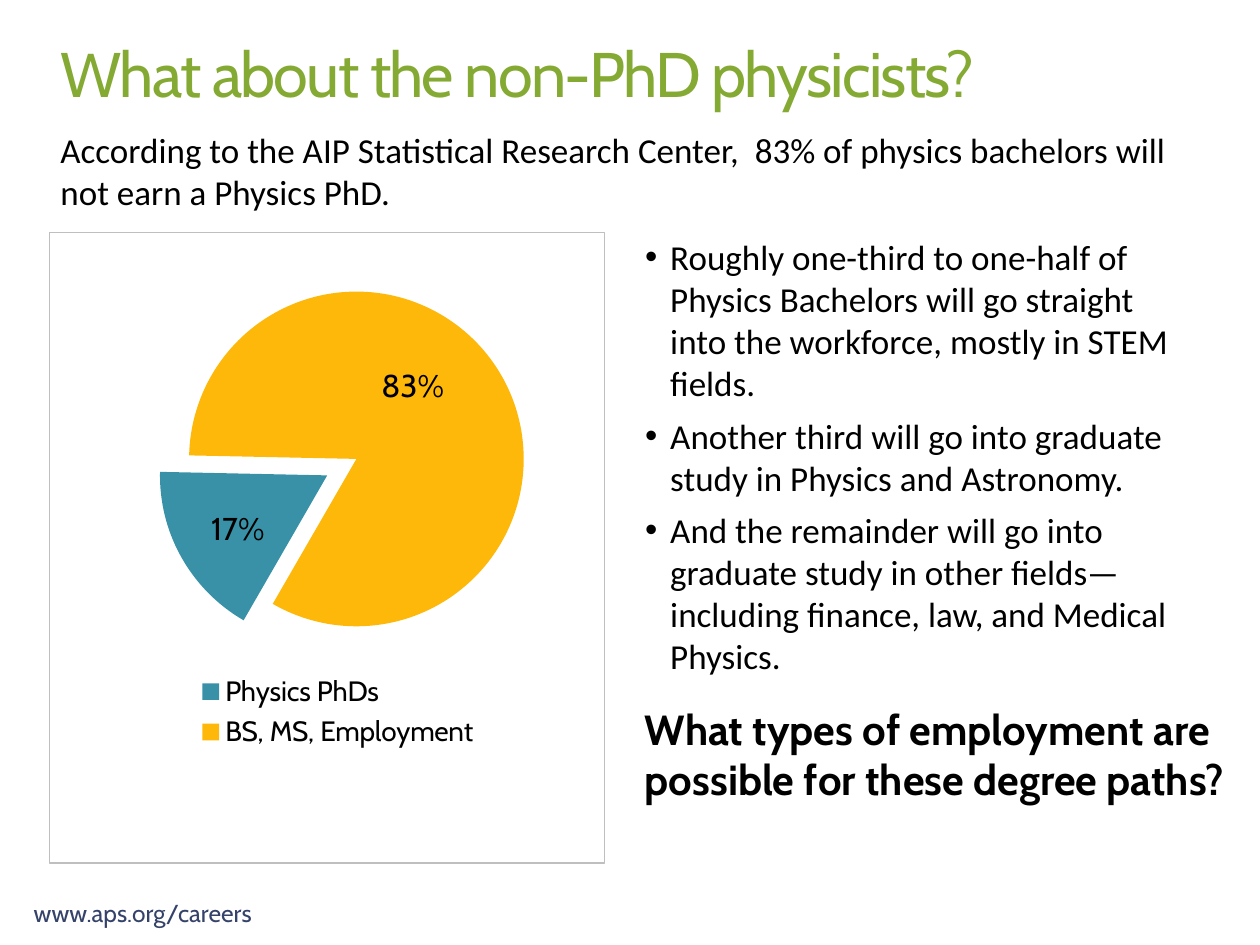
from dataclasses import dataclass

from lxml import etree
from pptx import Presentation
from pptx.chart.chart import Chart
from pptx.chart.data import CategoryChartData
from pptx.dml.color import RGBColor
from pptx.enum.chart import XL_CHART_TYPE, XL_LABEL_POSITION, XL_LEGEND_POSITION
from pptx.enum.shapes import MSO_SHAPE
from pptx.enum.text import MSO_ANCHOR, MSO_AUTO_SIZE, PP_ALIGN
from pptx.oxml import parse_xml
from pptx.oxml.ns import nsdecls, qn
from pptx.util import Pt

PIE = XL_CHART_TYPE.PIE
CENTER_LABEL = XL_LABEL_POSITION.CENTER
LEGEND_RIGHT = XL_LEGEND_POSITION.RIGHT
RECTANGLE = MSO_SHAPE.RECTANGLE
TOP = MSO_ANCHOR.TOP
NO_FIT = MSO_AUTO_SIZE.NONE
LEFT = PP_ALIGN.LEFT


@dataclass(frozen=True)
class Style:
    font: str
    size: float
    color: str
    bold: bool = False


@dataclass(frozen=True)
class Theme:
    title: Style = Style("Cabin", 36, "84AA33")
    body: Style = Style("Calibri", 20, "000000")
    question: Style = Style("Cabin", 24, "000000", True)
    footer: Style = Style("Cabin", 14, "35436A")
    label: Style = Style("Cabin", 18, "000000")
    legend: Style = Style("Cabin", 16, "000000")
    background: str = "FFFFFF"
    border: str = "BFBFBF"


@dataclass(frozen=True)
class Frame:
    left: float
    top: float
    width: float
    height: float

    def lengths(self) -> tuple:
        return Pt(self.left), Pt(self.top), Pt(self.width), Pt(self.height)


@dataclass(frozen=True)
class Slice:
    name: str
    share: float
    color: str
    label_shift: tuple[float, float]


THEME = Theme()
TITLE_FRAME = Frame(27.4, 16, 558, 48)
INTRO_FRAME = Frame(27.4, 69.8, 666, 55.7)
CHART_FRAME = Frame(27.8, 132.6, 318, 361)
LIST_FRAME = Frame(361.4, 131, 324, 262)
QUESTION_FRAME = Frame(361.4, 398.2, 348, 94)
FOOTER_FRAME = Frame(12.2, 509.8, 168, 24.2)
PLOT_PARTS = (0.194, 0.08, 0.666, 0.584)
LEGEND_PARTS = (0.25, 0.69, 0.54, 0.14)

SLICES = [
    Slice("Physics PhDs", 0.17, "3891A7", (-0.03, 0.02)),
    Slice("BS, MS, Employment", 0.83, "FEB80A", (-0.03, -0.05)),
]
OUTCOMES = [
    "Roughly one-third to one-half of Physics Bachelors will go straight into the workforce, "
    "mostly in STEM fields.",
    "Another third will go into graduate study in Physics and Astronomy.",
    "And the remainder will go into graduate study in other fields—including finance, law, "
    "and Medical Physics.",
]


def set_font(font, style: Style) -> None:
    font.name = style.font
    font.size = Pt(style.size)
    font.bold = style.bold
    font.color.rgb = RGBColor.from_string(style.color)


def fill_text(shape, frame: Frame, lines: list[str], style: Style) -> list:
    shape.left, shape.top, shape.width, shape.height = frame.lengths()
    text_frame = shape.text_frame
    text_frame.text = "\n".join(lines)
    text_frame.word_wrap = True
    text_frame.auto_size = NO_FIT
    text_frame.vertical_anchor = TOP
    for para in text_frame.paragraphs:
        para.alignment = LEFT
        para.space_before = Pt(0)
        for span in para.runs:
            set_font(span.font, style)
    return list(text_frame.paragraphs)


def add_text(page, frame: Frame, text: str, style: Style) -> None:
    box = page.shapes.add_textbox(*frame.lengths())
    fill_text(box, frame, [text], style)


def add_bullet(para) -> None:
    para.space_after = Pt(6)
    properties = para._p.get_or_add_pPr()
    properties.set("marL", str(Pt(14.4)))
    properties.set("indent", str(-Pt(14.4)))
    etree.SubElement(properties, qn("a:buFont")).set("typeface", "Arial")
    etree.SubElement(properties, qn("a:buChar")).set("char", "•")


def manual_layout(**values):
    layout = parse_xml(f"<c:layout {nsdecls('c')}><c:manualLayout/></c:layout>")
    for name, value in values.items():
        etree.SubElement(layout[0], qn(f"c:{name}")).set("val", str(value))
    return layout


def area_layout(parts: tuple, **target):
    horizontal, vertical, width, height = parts
    return manual_layout(**target, xMode="edge", yMode="edge",
                         x=horizontal, y=vertical, w=width, h=height)


def style_slices(chart: Chart) -> None:
    series = chart.plots[0].series[0]
    for index, part in enumerate(SLICES):
        point = series.points[index]
        point.format.fill.solid()
        point.format.fill.fore_color.rgb = RGBColor.from_string(part.color)
        label = point.data_label
        label.position = CENTER_LABEL
        set_font(label.font, THEME.label)
    for part, label in zip(SLICES, chart.element.iter(qn("c:dLbl"))):
        across, down = part.label_shift
        number_format = parse_xml(
            f'<c:numFmt {nsdecls("c")} formatCode="0%" sourceLinked="0"/>')
        label.find(qn("c:idx")).addnext(number_format)
        number_format.addprevious(manual_layout(x=across, y=down))


def place_parts(chart: Chart) -> None:
    root = chart.element
    plot_area = root.find(f".//{qn('c:plotArea')}")
    for layout in plot_area.findall(qn("c:layout")):
        plot_area.remove(layout)
    plot_area.insert(0, area_layout(PLOT_PARTS, layoutTarget="inner"))
    legend = root.find(f".//{qn('c:legend')}")
    for layout in legend.findall(qn("c:layout")):
        legend.remove(layout)
    legend.find(qn("c:legendPos")).addnext(area_layout(LEGEND_PARTS))
    pie = plot_area.find(qn("c:pieChart"))
    for angle in pie.findall(qn("c:firstSliceAng")):
        pie.remove(angle)
    etree.SubElement(pie, qn("c:firstSliceAng")).set("val", "210")
    explosion = parse_xml(f'<c:explosion {nsdecls("c")} val="10"/>')
    pie.find(f"{qn('c:ser')}/{qn('c:tx')}").addnext(explosion)
    root.find(qn("c:chart")).addnext(parse_xml(
        f'<c:spPr {nsdecls("c", "a")}><a:solidFill><a:srgbClr val="{THEME.background}"/>'
        f'</a:solidFill><a:ln w="{Pt(0.75)}"><a:solidFill><a:srgbClr val="{THEME.border}"/>'
        "</a:solidFill></a:ln></c:spPr>"))


def add_pie(page) -> None:
    data = CategoryChartData(number_format="0%")
    data.categories = [part.name for part in SLICES]
    data.add_series("Series 1", [part.share for part in SLICES])
    chart = page.shapes.add_chart(PIE, *CHART_FRAME.lengths(), data).chart
    set_font(chart.font, THEME.label)
    chart.has_title = False
    chart.plots[0].vary_by_categories = True
    chart.has_legend = True
    chart.legend.position = LEGEND_RIGHT
    chart.legend.include_in_layout = False
    set_font(chart.legend.font, THEME.legend)
    place_parts(chart)
    style_slices(chart)


def main() -> None:
    """Build the slide on career paths of physicists without a PhD."""
    deck = Presentation()
    deck.slide_width, deck.slide_height = Pt(720), Pt(540)
    page = deck.slides.add_slide(deck.slide_layouts[1])
    title, body = page.placeholders
    add_text(page, FOOTER_FRAME, "www.aps.org/careers", THEME.footer)
    heading = fill_text(title, TITLE_FRAME, ["What about the non-PhD physicists?"], THEME.title)
    heading[0].runs[0].font._element.set("spc", "-100")
    intro = page.shapes.add_shape(RECTANGLE, *INTRO_FRAME.lengths())
    intro.shadow.inherit = False
    intro.fill.solid()
    intro.fill.fore_color.rgb = RGBColor.from_string(THEME.background)
    intro.line.fill.background()
    fill_text(intro, INTRO_FRAME, [
        "According to the AIP Statistical Research Center,  83% of physics bachelors "
        "will not earn a Physics PhD."], THEME.body)
    add_pie(page)
    for para in fill_text(body, LIST_FRAME, OUTCOMES, THEME.body):
        add_bullet(para)
    add_text(page, QUESTION_FRAME,
             "What types of employment are possible for these degree paths?", THEME.question)
    deck.save("out.pptx")


if __name__ == "__main__":
    main()
